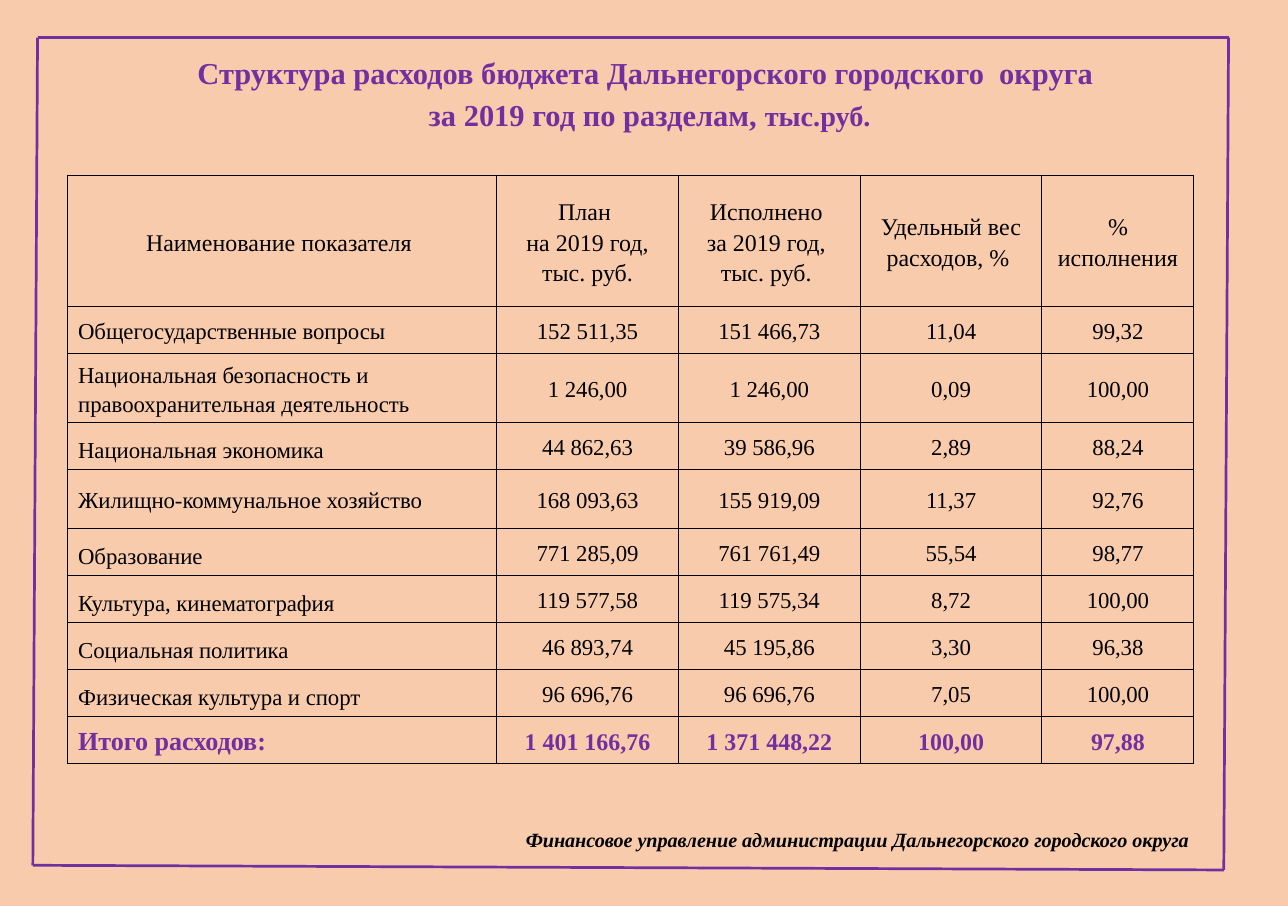
"""Builds the slide on the district's budget spending by section for 2019."""
import lxml.etree
import pptx
import pptx.dml.color
import pptx.enum.shapes
import pptx.enum.text
import pptx.oxml.ns
import pptx.util

Inches = pptx.util.Inches
Pt = pptx.util.Pt
Align = pptx.enum.text.PP_ALIGN
qn = pptx.oxml.ns.qn

PEACH = pptx.dml.color.RGBColor(0xF8, 0xCB, 0xAD)
PURPLE = pptx.dml.color.RGBColor(0x70, 0x30, 0xA0)
BLACK = pptx.dml.color.RGBColor(0, 0, 0)
FONT = "Times New Roman"

COLUMN_WIDTHS = [2.74, 1.16, 1.16, 1.16, 0.97]
ROW_HEIGHT = 0.3
SPECIAL_ROW_HEIGHTS = {0: 0.84, 2: 0.44, 4: 0.38}
FIXED_SPACING_ROWS = {3, 5, 6, 7, 8}

HEADINGS = [
    "Наименование показателя ",
    "План \nна 2019 год, тыс. руб.",
    "Исполнено \nза 2019 год, \nтыс. руб. ",
    "Удельный вес расходов, % ",
    "% исполнения",
]
SECTIONS = [
    ("Общегосударственные вопросы", "152 511,35", "151 466,73", "11,04", "99,32"),
    ("Национальная безопасность и правоохранительная деятельность",
     "1 246,00", "1 246,00", "0,09", "100,00"),
    ("Национальная экономика", "44 862,63", "39 586,96", "2,89", "88,24"),
    ("Жилищно-коммунальное хозяйство", "168 093,63", "155 919,09", "11,37", "92,76"),
    ("Образование", "771 285,09", "761 761,49", "55,54", "98,77"),
    ("Культура, кинематография", "119 577,58", "119 575,34", "8,72", "100,00"),
    ("Социальная политика", "46 893,74", "45 195,86", "3,30", "96,38"),
    ("Физическая культура и спорт", "96 696,76", "96 696,76", "7,05", "100,00"),
]
TOTAL = ("Итого расходов:", "1 401 166,76", "1 371 448,22", "100,00", "97,88")


def write(frame, text, size, color=BLACK, bold=False, italic=False,
          align=Align.LEFT, spacing=1.15, tail="", tail_size=None):
    """Fill a text frame line by line, with an optional tail of another size."""
    frame.word_wrap = True
    lines = text.split("\n")
    for index, line in enumerate(lines):
        paragraph = frame.paragraphs[0] if index == 0 else frame.add_paragraph()
        paragraph.alignment = align
        paragraph.line_spacing = spacing
        pieces = [(line, size)]
        if tail and index == len(lines) - 1:
            pieces.append((tail, tail_size))
        for piece, piece_size in pieces:
            run = paragraph.add_run()
            run.text = piece
            run.font.name = FONT
            run.font.size = Pt(piece_size)
            run.font.bold = bold
            run.font.italic = italic
            run.font.color.rgb = color


def add_frame(slide, left, top, width, height):
    """Draw the slightly slanted purple border inside the given box."""
    slant = 0.03
    right, bottom = left + width, top + height
    corners = [(left + slant, top), (right, top),
               (right - slant, bottom), (left, bottom - slant)]
    for start, end in zip(corners, corners[1:] + corners[:1]):
        side = slide.shapes.add_connector(
            pptx.enum.shapes.MSO_CONNECTOR.STRAIGHT,
            *(Inches(length) for length in start + end))
        side.line.color.rgb = PURPLE
        side.line.width = Pt(1.25)
        lxml.etree.SubElement(side._element.spPr, qn("a:effectLst"))


def add_title(slide, left, top, width, height):
    """Place the two-line title."""
    title = slide.shapes.add_textbox(
        Inches(left), Inches(top), Inches(width), Inches(height))
    write(title.text_frame,
          "Структура расходов бюджета Дальнегорского городского  округа \n"
          "за 2019 год по разделам, ",
          14, color=PURPLE, bold=True, align=Align.CENTER,
          tail="тыс.руб.", tail_size=13)


def add_signature(slide, left, top, width, height):
    """Place the name of the department at the foot."""
    signature = slide.shapes.add_textbox(
        Inches(left), Inches(top), Inches(width), Inches(height))
    signature.text_frame.margin_left = Inches(0.34)
    write(signature.text_frame,
          "Финансовое управление администрации Дальнегорского городского округа",
          9.3, bold=True, italic=True, spacing=1.0)


def outline_cell(cell):
    """Give a cell thin black borders and no fill."""
    properties = cell._tc.get_or_add_tcPr()
    for edge in ("a:lnL", "a:lnR", "a:lnT", "a:lnB"):
        border = lxml.etree.SubElement(properties, qn(edge), w=str(Pt(0.5)))
        fill = lxml.etree.SubElement(border, qn("a:solidFill"))
        lxml.etree.SubElement(fill, qn("a:srgbClr"), val=str(BLACK))
    cell.fill.background()


def add_spending_table(slide, left, top, width):
    """Place the table of planned and actual spending."""
    rows = [HEADINGS, *SECTIONS, TOTAL]
    last = len(rows) - 1
    heights = [SPECIAL_ROW_HEIGHTS.get(r, ROW_HEIGHT) for r in range(len(rows))]
    table = slide.shapes.add_table(
        len(rows), len(HEADINGS), Inches(left), Inches(top),
        Inches(width), Inches(sum(heights))).table
    table.first_row = table.horz_banding = False
    for column, share in zip(table.columns, COLUMN_WIDTHS):
        column.width = Inches(width * share / sum(COLUMN_WIDTHS))
    for r, (values, height) in enumerate(zip(rows, heights)):
        table.rows[r].height = Inches(height)
        for c, value in enumerate(values):
            cell = table.cell(r, c)
            cell.margin_left = cell.margin_right = Inches(0.07)
            cell.margin_top = cell.margin_bottom = 0
            cell.vertical_anchor = pptx.enum.text.MSO_ANCHOR.MIDDLE
            outline_cell(cell)
            is_name = c == 0 and r > 0
            if r == last:
                size = 12 if is_name else 11
            else:
                size = 11 if r == 0 else 10.5
            write(cell.text_frame, value, size,
                  color=PURPLE if r == last else BLACK, bold=r == last,
                  align=Align.LEFT if is_name else Align.CENTER,
                  spacing=Pt(15.8) if is_name and r in FIXED_SPACING_ROWS else 1.15)


def main():
    """Build and save the slide."""
    deck = pptx.Presentation()
    deck.slide_width, deck.slide_height = Inches(8.23), Inches(5.79)
    slide = deck.slides.add_slide(deck.slide_layouts[6])
    slide.background.fill.solid()
    slide.background.fill.fore_color.rgb = PEACH
    add_signature(slide, 3.02, 5.24, 4.97, 0.26)
    add_frame(slide, 0.21, 0.24, 7.64, 5.32)
    add_title(slide, 0.34, 0.26, 7.62, 0.64)
    add_spending_table(slide, 0.43, 1.12, 7.2)
    deck.save("out.pptx")


if __name__ == "__main__":
    main()
